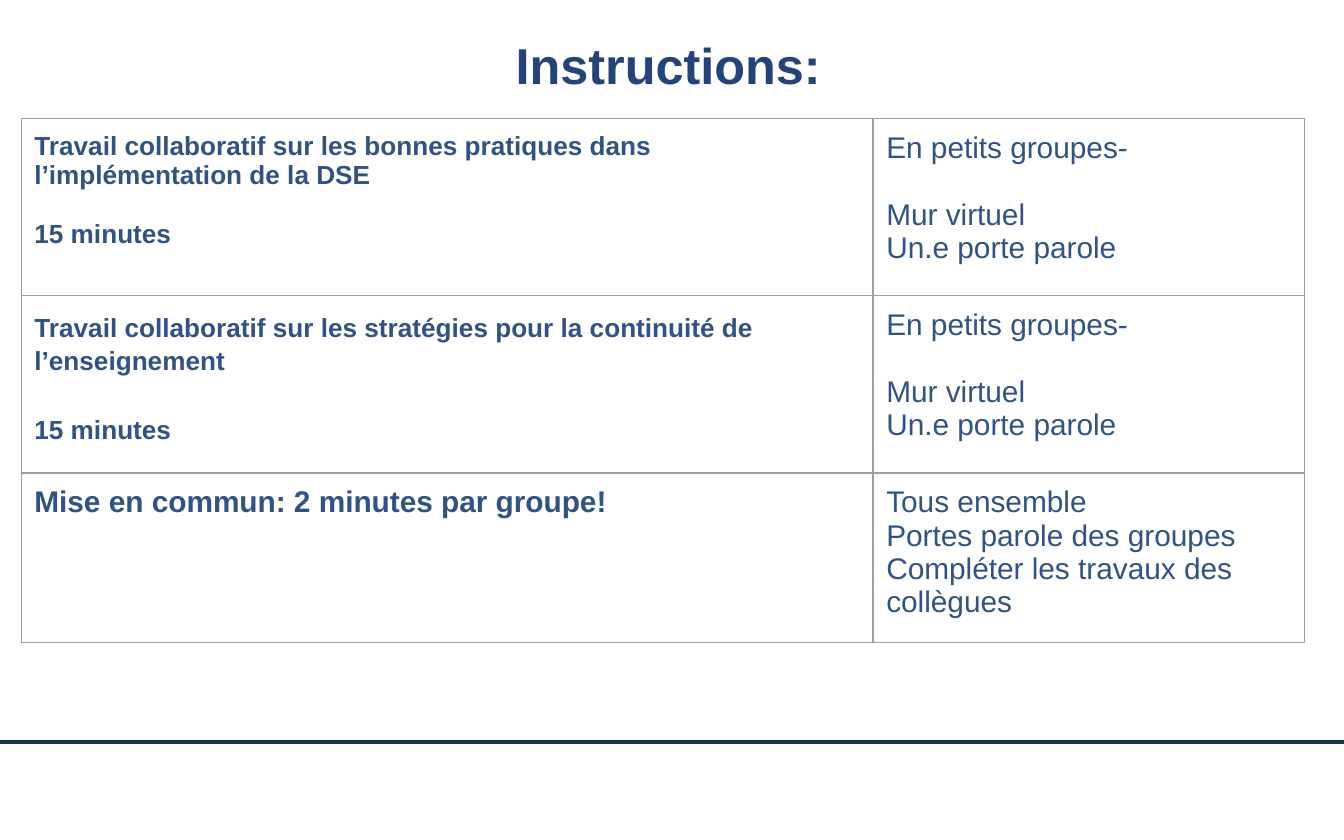
"""Build the instructions slide with its table of group activities."""
from dataclasses import dataclass

from lxml.etree import SubElement
from pptx import Presentation
from pptx.dml.color import RGBColor as Color
from pptx.enum.shapes import MSO_CONNECTOR as Connector
from pptx.enum.text import MSO_ANCHOR as Anchor, PP_ALIGN as Align
from pptx.oxml.ns import qn
from pptx.util import Cm, Pt


@dataclass(frozen=True)
class Theme:
    font: str = "Arial"
    title: str = "24427B"
    body: str = "305284"
    border: str = "9E9E9E"
    rule: str = "163644"
    title_size: int = 27
    small_size: int = 14
    body_size: int = 16


THEME = Theme()
INSET = Cm(0.25)
COLUMN_WIDTHS = (Cm(16.1), Cm(8.15))
ROW_HEIGHTS = (Cm(3.35), Cm(3.35), Cm(3.02))
GROUP_WORK = ("En petits groupes-", "Mur virtuel", "Un.e porte parole")
DURATION = "15 minutes"


def style_paragraph(para, size, color, bold):
    for span in para.runs:
        span.font.name = THEME.font
        span.font.size = Pt(size)
        span.font.bold = bold
        span.font.color.rgb = Color.from_string(color)


def add_title(page, text):
    box = page.shapes.add_textbox(Cm(0.4), Cm(0.4), Cm(24.46), Cm(1.62))
    frame = box.text_frame
    frame.word_wrap = True
    frame.vertical_anchor = Anchor.MIDDLE
    frame.margin_left = frame.margin_right = INSET
    frame.margin_top = frame.margin_bottom = INSET
    frame.text = text
    para = frame.paragraphs[0]
    para.alignment = Align.CENTER
    style_paragraph(para, THEME.title_size, THEME.title, True)


def add_rule(page):
    rule = page.shapes.add_connector(
        Connector.STRAIGHT, Cm(-0.05), Cm(14.02), Cm(25.5), Cm(14.02))
    rule.line.color.rgb = Color.from_string(THEME.rule)
    rule.line.width = Pt(2.25)
    SubElement(rule._element.spPr, qn("a:effectLst"))


def set_borders(cell):
    properties = cell._tc.get_or_add_tcPr()
    for side in ("lnL", "lnR", "lnT", "lnB"):
        line = SubElement(properties, qn(f"a:{side}"), w=str(Pt(0.75)))
        fill = SubElement(line, qn("a:solidFill"))
        SubElement(fill, qn("a:srgbClr"), val=THEME.border)


def fill_cell(cell, lines, size, bold, gap=0, spacing=None):
    """Write the lines, with a gap in points before the second one."""
    cell.margin_left = cell.margin_right = INSET
    cell.margin_top = cell.margin_bottom = INSET
    set_borders(cell)
    cell.fill.background()
    cell.text_frame.text = "\n".join(lines)
    for index, para in enumerate(cell.text_frame.paragraphs):
        if index == 1 and gap:
            para.space_before = Pt(gap)
        if spacing:
            para.line_spacing = spacing
        style_paragraph(para, size, THEME.body, bold)


def add_activities(page):
    frame = page.shapes.add_table(
        len(ROW_HEIGHTS), len(COLUMN_WIDTHS), Cm(0.4), Cm(2.24),
        sum(COLUMN_WIDTHS), sum(ROW_HEIGHTS))
    table = frame.table
    table.first_row = table.horz_banding = False
    for column, width in zip(table.columns, COLUMN_WIDTHS):
        column.width = width
    for row, height in zip(table.rows, ROW_HEIGHTS):
        row.height = height

    small, body = THEME.small_size, THEME.body_size
    practices = ("Travail collaboratif sur les bonnes pratiques dans "
                 "l’implémentation de la DSE", DURATION)
    strategies = ("Travail collaboratif sur les stratégies pour la continuité "
                  "de l’enseignement", DURATION)
    sharing = ("Tous ensemble", "Portes parole des groupes",
               "Compléter les travaux des collègues")
    fill_cell(table.cell(0, 0), practices, small, True, gap=15.5)
    fill_cell(table.cell(1, 0), strategies, small, True, gap=18.5, spacing=1.15)
    fill_cell(table.cell(2, 0), ("Mise en commun: 2 minutes par groupe!",),
              body, True)
    for row in (0, 1):
        fill_cell(table.cell(row, 1), GROUP_WORK, body, False, gap=18)
    fill_cell(table.cell(2, 1), sharing, body, False)


def main():
    deck = Presentation()
    deck.slide_width, deck.slide_height = Cm(25.4), Cm(15.88)
    page = deck.slides.add_slide(deck.slide_layouts[6])
    add_rule(page)
    add_title(page, "Instructions:")
    add_activities(page)
    deck.save("out.pptx")


if __name__ == "__main__":
    main()
